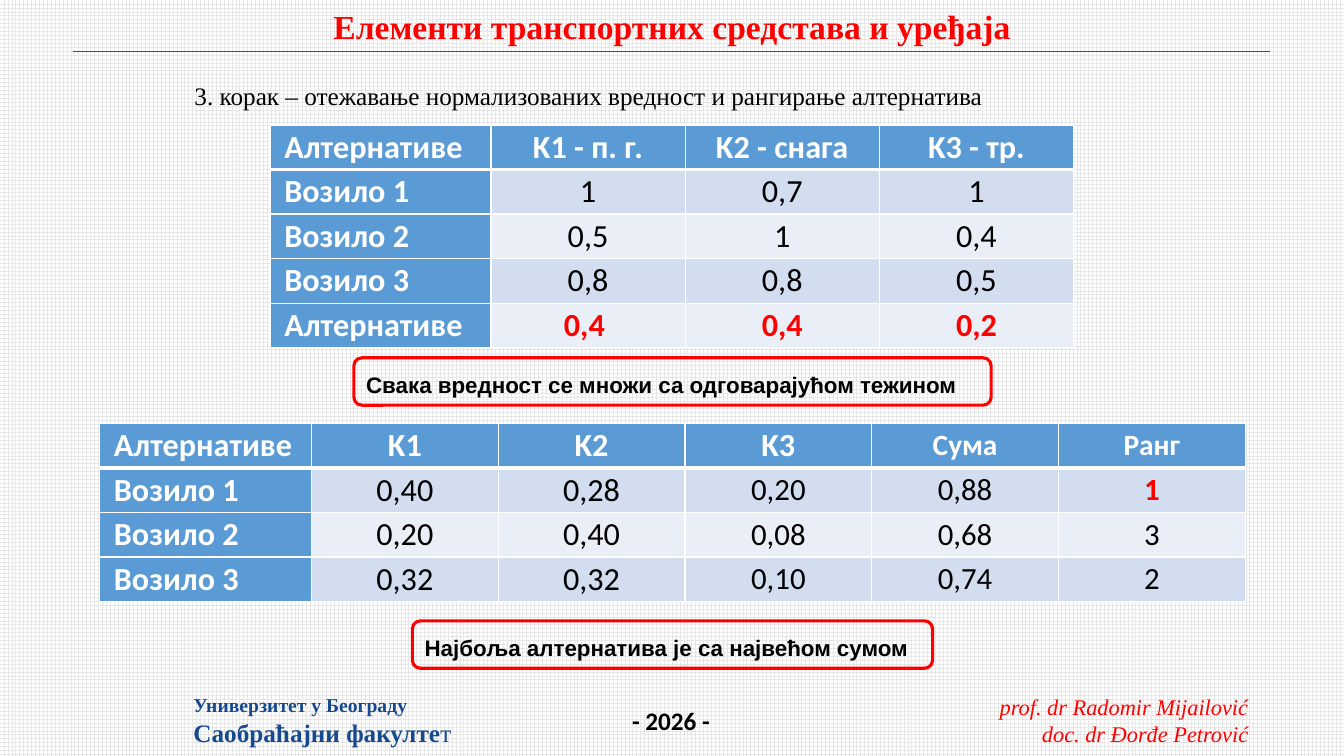
from lxml import etree
from pptx import Presentation
from pptx.dml.color import RGBColor
from pptx.enum.dml import MSO_PATTERN
from pptx.enum.shapes import MSO_CONNECTOR, MSO_SHAPE
from pptx.enum.text import MSO_ANCHOR, MSO_AUTO_SIZE, PP_ALIGN
from pptx.oxml.ns import qn
from pptx.util import Inches, Pt

LARGE_GRID = MSO_PATTERN.LARGE_GRID
STRAIGHT = MSO_CONNECTOR.STRAIGHT
ROUNDED = MSO_SHAPE.ROUNDED_RECTANGLE
MIDDLE = MSO_ANCHOR.MIDDLE
GROW = MSO_AUTO_SIZE.SHAPE_TO_FIT_TEXT
LEFT, CENTER, RIGHT = PP_ALIGN.LEFT, PP_ALIGN.CENTER, PP_ALIGN.RIGHT

RED, BLACK, WHITE, NAVY = "FF0000", "000000", "FFFFFF", "16498E"
HEAD_FILL, BANDS = "5B9BD5", ("D2DEEF", "EAEFF7")
SERIF, SANS, TABLE_FONT = "Times New Roman", "Arial", "Calibri"

WEIGHTS_TABLE = [
    ["Алтернативе", "K1 - п. г.", "K2 - снага", "K3 - тр."],
    ["Возило 1", "1", "0,7", "1"],
    ["Возило 2", "0,5", "1", "0,4"],
    ["Возило 3", "0,8", "0,8", "0,5"],
    ["Алтернативе", "0,4 ", "0,4", "0,2"],
]
RANK_TABLE = [
    ["Алтернативе", "K1", "K2", "K3", "Сума", "Ранг"],
    ["Возило 1", "0,40", "0,28", "0,20", "0,88", "1"],
    ["Возило 2", "0,20", "0,40", "0,08", "0,68", "3"],
    ["Возило 3", "0,32", "0,32", "0,10", "0,74", "2"],
]


def rgb(color):
    return RGBColor.from_string(color)


def set_font(font, name, size, color, bold=False, italic=False):
    font.name, font.size = name, Pt(size)
    font.bold, font.italic = bold, italic
    font.color.rgb = rgb(color)


def add_label(s, box, lines, color, font=SERIF, align=LEFT, bold=False, italic=False):
    """Text box; lines holds pairs of text and size."""
    tf = s.shapes.add_textbox(*map(Inches, box)).text_frame
    tf.word_wrap = False
    tf.auto_size = GROW
    for i, (text, size) in enumerate(lines):
        p = tf.add_paragraph() if i else tf.paragraphs[0]
        p.text, p.alignment = text, align
        set_font(p.font, font, size, color, bold, italic)
    return tf


def add_rule(s, left, right, y):
    line = s.shapes.add_connector(STRAIGHT, Inches(left), Inches(y), Inches(right), Inches(y))
    line.line.color.rgb = rgb(RED)
    line.line.width = Pt(0.5)
    etree.SubElement(line._element.spPr, qn("a:effectLst"))


def add_callout(s, box, text):
    sp = s.shapes.add_shape(ROUNDED, *map(Inches, box))
    sp.shadow.inherit = False
    sp.fill.background()
    sp.line.color.rgb = rgb(RED)
    sp.line.width = Pt(2.25)
    tf = sp.text_frame
    tf.word_wrap = True
    tf.vertical_anchor = MIDDLE
    p = tf.paragraphs[0]
    p.text, p.alignment, p.line_spacing = text, LEFT, 1.2
    set_font(p.font, SANS, 16, BLACK, bold=True)


def set_borders(cell, top, bottom):
    tcPr = cell._tc.get_or_add_tcPr()
    for side, width in (("L", 1), ("R", 1), ("T", top), ("B", bottom)):
        ln = etree.SubElement(tcPr, qn("a:ln" + side), w=str(Pt(width)))
        fill = etree.SubElement(ln, qn("a:solidFill"))
        etree.SubElement(fill, qn("a:srgbClr"), val=WHITE)


def add_grid(s, box, first_width, rows, size_of, red_cells):
    """Banded table with a coloured header row and first column."""
    n_cols = len(rows[0])
    table = s.shapes.add_table(len(rows), n_cols, *map(Inches, box)).table
    table.first_col = True
    other_width = (box[2] - first_width) / (n_cols - 1)
    for c, column in enumerate(table.columns):
        column.width = Inches(other_width if c else first_width)
    for r, row in enumerate(rows):
        for c, text in enumerate(row):
            cell = table.cell(r, c)
            is_head, is_red = r == 0 or c == 0, (r, c) in red_cells
            set_borders(cell, 3 if r == 1 else 1, 3 if r == 0 else 1)
            cell.fill.solid()
            cell.fill.fore_color.rgb = rgb(HEAD_FILL if is_head else BANDS[(r - 1) % 2])
            cell.vertical_anchor = MIDDLE
            cell.margin_left = cell.margin_right = Inches(0.14)
            cell.margin_top = cell.margin_bottom = 0
            p = cell.text_frame.paragraphs[0]
            p.text, p.alignment = text, CENTER if c else LEFT
            color = WHITE if is_head else RED if is_red else BLACK
            set_font(p.font, TABLE_FONT, size_of(r, c), color, is_head or is_red)


def rank_size(r, c):
    if r == 0:
        return 21 if c > 3 else 23
    return 22 if c > 2 else 23


def main():
    prs = Presentation()
    prs.slide_width, prs.slide_height = Inches(13.33), Inches(7.5)
    s = prs.slides.add_slide(prs.slide_layouts[6])

    # Background grid
    bg = s.background.fill
    bg.patterned()
    bg.pattern = LARGE_GRID
    bg.fore_color.rgb, bg.back_color.rgb = rgb("E7E6E6"), rgb(WHITE)

    # Header and footer
    add_label(s, (9.77, 6.83, 2.71, 0.64),
              [("prof. dr Radomir Mijailović", 16), ("doc. dr Đorđe Petrović", 16)],
              RED, align=RIGHT, italic=True)
    add_rule(s, 0.72, 12.6, 0.51)
    add_label(s, (3.17, 0.01, 6.99, 0.5),
              [("Елементи транспортних средстава и уређаја", 24)],
              RED, align=CENTER, bold=True)
    add_label(s, (6.17, 6.95, 0.98, 0.4), [("- 2026 -", 18)], BLACK, TABLE_FONT, bold=True)
    tf = add_label(s, (1.82, 6.83, 2.79, 0.64),
                   [("Универзитет у Београду", 14), ("Саобраћајни факулте", 18)],
                   NAVY, bold=True)
    last = tf.paragraphs[1].add_run()
    last.text = "т"
    last.font.bold = False

    # Step title, callouts and tables
    add_label(s, (1.83, 0.75, 8.28, 0.4),
              [("3. корак – отежавање нормализованих вредност и рангирање алтернатива", 18)], BLACK)
    add_callout(s, (3.51, 3.55, 6.32, 0.47), "Свака вредност се множи са одговарајућом тежином")
    add_callout(s, (4.09, 6.16, 5.16, 0.47), "Најбоља алтернатива је са највећом сумом")
    add_grid(s, (2.68, 1.24, 7.97, 2.21), 2.19, WEIGHTS_TABLE,
             lambda r, c: 23, {(4, 1), (4, 2), (4, 3)})
    add_grid(s, (0.99, 4.2, 11.36, 1.77), 2.1, RANK_TABLE, rank_size, {(1, 5)})

    prs.save("out.pptx")


if __name__ == "__main__":
    main()
